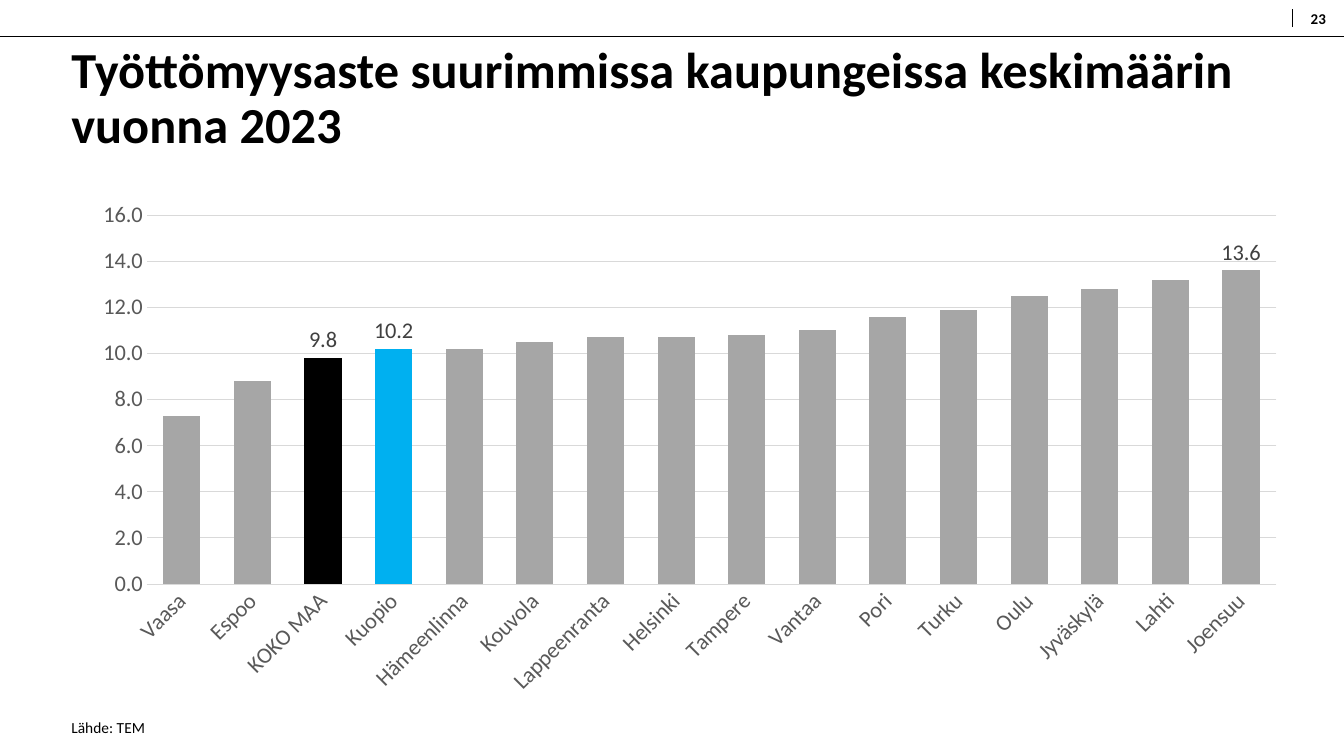
import pptx
import pptx.util
import pptx.chart.data
import pptx.dml.color
import pptx.enum.chart
import pptx.enum.shapes
import pptx.enum.text
import pptx.oxml.ns
import pptx.oxml.xmlchemy
from dataclasses import dataclass

Inches = pptx.util.Inches
Pt = pptx.util.Pt
qn = pptx.oxml.ns.qn
Element = pptx.oxml.xmlchemy.OxmlElement
Anchor = pptx.enum.text.MSO_ANCHOR
Align = pptx.enum.text.PP_ALIGN


@dataclass(frozen=True)
class Theme:
    font: str = "Calibri"
    ink: str = "000000"
    label: str = "404040"
    axis: str = "595959"
    grid: str = "D9D9D9"
    bar: str = "A6A6A6"
    accent: str = "00B0F0"
    title: float = 36
    chart: float = 16
    note: float = 11
    number: float = 10.7
    rule: float = 0.5
    hair: float = 0.75


THEME = Theme()

RATES = {
    "Vaasa": 7.3, "Espoo": 8.8, "KOKO MAA": 9.8, "Kuopio": 10.2,
    "Hämeenlinna": 10.2, "Kouvola": 10.5, "Lappeenranta": 10.7,
    "Helsinki": 10.7, "Tampere": 10.8, "Vantaa": 11, "Pori": 11.6,
    "Turku": 11.9, "Oulu": 12.5, "Jyväskylä": 12.8, "Lahti": 13.2,
    "Joensuu": 13.6,
}
MARKED = {"KOKO MAA": THEME.ink, "Kuopio": THEME.accent, "Joensuu": THEME.bar}
PLOT = {"x": 0.069, "y": 0.046, "w": 0.917, "h": 0.688}


def rgb(code):
    return pptx.dml.color.RGBColor.from_string(code)


def style(font, size, color, bold=False):
    font.name = THEME.font
    font.size = Pt(size)
    font.bold = bold
    font.color.rgb = rgb(color)


def paint(fill, color):
    fill.solid()
    fill.fore_color.rgb = rgb(color)


def stroke(line, color, width):
    line.color.rgb = rgb(color)
    line.width = Pt(width)


def add_text(slide, box, text, size, bold=False):
    frame = slide.shapes.add_textbox(*map(Inches, box)).text_frame
    frame.word_wrap = True
    frame.text = text
    style(frame.paragraphs[0].runs[0].font, size, THEME.ink, bold)
    return frame


def add_rule(slide, *ends):
    rule = slide.shapes.add_connector(
        pptx.enum.shapes.MSO_CONNECTOR.STRAIGHT, *map(Inches, ends))
    stroke(rule.line, THEME.ink, THEME.rule)
    rule._element.spPr.append(Element("a:effectLst"))


def add_header(slide, box):
    """Rule under the top band, with the page number at its right end."""
    left, top, width, height = box
    right, base = left + width, top + height
    cell = 0.51
    add_rule(slide, left, base, right, base)
    add_rule(slide, right - cell, top + height * 0.75,
             right - cell, top + height * 0.25)
    frame = add_text(slide, (right - cell, top, cell, height), "23",
                     THEME.number, True)
    frame.margin_left = frame.margin_right = 0
    frame.margin_top = frame.margin_bottom = 0
    frame.vertical_anchor = Anchor.MIDDLE
    frame.paragraphs[0].alignment = Align.CENTER


def add_title(slide, box):
    frame = add_text(
        slide, box,
        "Työttömyysaste suurimmissa kaupungeissa keskimäärin vuonna 2023",
        THEME.title, True)
    frame.paragraphs[0].line_spacing = 0.9
    frame.paragraphs[0].space_after = Pt(8)


def fix_plot(chart):
    """Pin the inner plot area to the PLOT fractions of the chart."""
    area = chart._chartSpace.chart.plotArea
    for old in area.findall(qn("c:layout")):
        area.remove(old)
    layout = Element("c:layout")
    manual = Element("c:manualLayout")
    layout.append(manual)
    marks = [("layoutTarget", "inner"), ("xMode", "edge"), ("yMode", "edge")]
    for tag, value in marks + list(PLOT.items()):
        item = Element("c:" + tag)
        item.set("val", str(value))
        manual.append(item)
    area.insert(0, layout)


def style_axes(chart):
    none = pptx.enum.chart.XL_TICK_MARK.NONE
    cities, rates = chart.category_axis, chart.value_axis
    for axis in (cities, rates):
        axis.major_tick_mark = axis.minor_tick_mark = none
        style(axis.tick_labels.font, THEME.chart, THEME.axis)
    cities.has_major_gridlines = False
    stroke(cities.format.line, THEME.grid, THEME.hair)
    body = cities._element.find(qn("c:txPr")).find(qn("a:bodyPr"))
    body.set("rot", "-2700000")
    body.set("vert", "horz")
    rates.minimum_scale, rates.maximum_scale, rates.major_unit = 0, 16, 2
    rates.tick_labels.number_format = "0.0"
    rates.tick_labels.number_format_is_linked = False
    rates.format.line.fill.background()
    stroke(rates.major_gridlines.format.line, THEME.grid, THEME.hair)


def add_bars(slide, box):
    data = pptx.chart.data.CategoryChartData(number_format="0.0")
    data.categories = list(RATES)
    data.add_series("Series 1", list(RATES.values()))
    chart = slide.shapes.add_chart(
        pptx.enum.chart.XL_CHART_TYPE.COLUMN_CLUSTERED,
        *map(Inches, box), data).chart
    chart.has_title = chart.has_legend = False
    style(chart.font, THEME.chart, THEME.ink)
    style_axes(chart)
    fix_plot(chart)

    plot = chart.plots[0]
    plot.vary_by_categories = False
    plot.gap_width, plot.overlap = 90, -47
    bars = plot.series[0]
    paint(bars.format.fill, THEME.bar)
    bars.data_labels.show_value = False
    for spot, city in enumerate(RATES):
        if city in MARKED:
            point = bars.points[spot]
            paint(point.format.fill, MARKED[city])
            style(point.data_label.font, THEME.chart, THEME.label)
            point.data_label.position = (
                pptx.enum.chart.XL_LABEL_POSITION.OUTSIDE_END)


def add_source(slide, box):
    add_text(slide, box, "Lähde: TEM", THEME.note)


def main():
    deck = pptx.Presentation()
    deck.slide_width, deck.slide_height = Inches(13.33), Inches(7.5)
    slide = deck.slides.add_slide(deck.slide_layouts[6])
    left = 0.61
    add_header(slide, (0, 0, 13.33, 0.36))
    add_title(slide, (left, 0.4, 12.12, 1.05))
    add_bars(slide, (left, 1.89, 12.22, 5.32))
    add_source(slide, (left, 7.07, 6.56, 0.29))
    deck.save("out.pptx")


if __name__ == "__main__":
    main()
